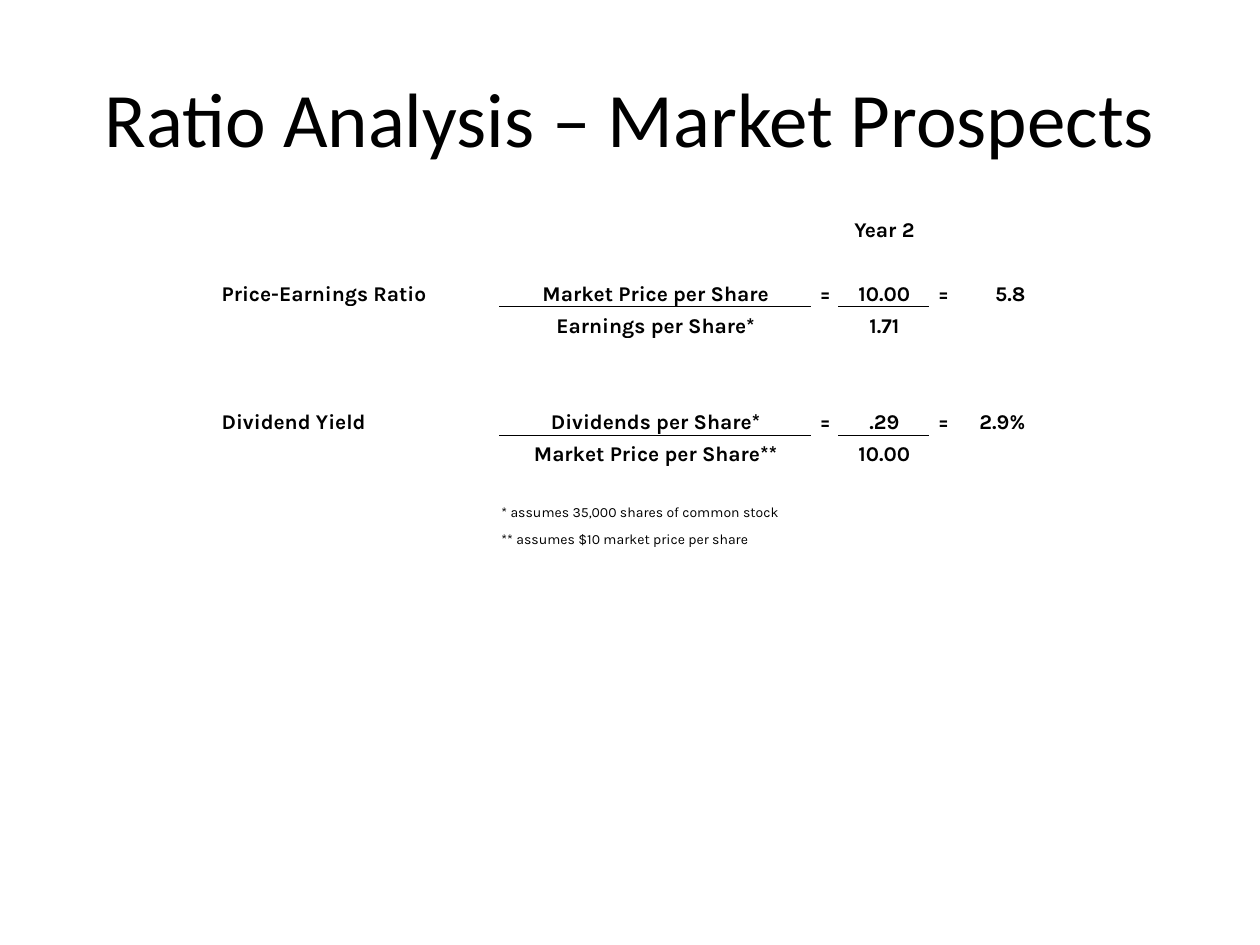
"""Build the market prospects ratio slide."""
from dataclasses import dataclass

from lxml import etree
from pptx import Presentation
from pptx.dml.color import RGBColor
from pptx.enum import text
from pptx.oxml.ns import qn
from pptx.util import Inches, Pt

ALIGN = text.PP_ALIGN


@dataclass(frozen=True)
class Theme:
    """Fonts, sizes and colours."""
    heading_font: str = "Calibri"
    body_font: str = "Karla"
    ink: str = "000000"
    heading: int = 44
    body: int = 12
    note: int = 8
    rule: float = 0.5


@dataclass(frozen=True)
class Ratio:
    """One ratio with its formula, figures and result."""
    row: int
    label: str
    numerator: str
    denominator: str
    top: str
    bottom: str
    result: str


THEME = Theme()
RATIOS = (
    Ratio(2, "Price-Earnings Ratio", "Market Price per Share", "Earnings per Share*",
          "10.00", "1.71", "5.8"),
    Ratio(6, "Dividend Yield", "Dividends per Share*", "Market Price per Share**",
          ".29", "10.00", "2.9%"),
)
NOTES = ("* assumes 35,000 shares of common stock", "** assumes $10 market price per share")
COLUMNS = (2.22, 2.47, 0.22, 0.72, 0.22, 0.72)
ROWS = (2.04 / 8,) * 8 + (0.64 / 3,) * 3
LABEL, FORMULA, EQUALS, FIGURE, SECOND_EQUALS, RESULT = range(6)


def apply(target, formats: dict) -> None:
    """Set each named attribute on the target."""
    for name, value in formats.items():
        setattr(target, name, value)


def style_font(font, family: str, size: int, bold: bool) -> None:
    """Give a font its face, size, weight and colour."""
    apply(font, {"name": family, "size": Pt(size), "bold": bold})
    font.color.rgb = RGBColor.from_string(THEME.ink)


def write(cell, words: str, align=ALIGN.CENTER, size: int = THEME.body, bold: bool = True) -> None:
    """Put formatted words in a cell."""
    paragraph = cell.text_frame.paragraphs[0]
    paragraph.alignment = align
    run = paragraph.add_run()
    run.text = words
    style_font(run.font, THEME.body_font, size, bold)


def rule(cell, side: str) -> None:
    """Draw a thin line on one side of a cell."""
    line = etree.SubElement(cell._tc.get_or_add_tcPr(), qn(f"a:ln{side}"),
                            w=str(Pt(THEME.rule)))
    fill = etree.SubElement(line, qn("a:solidFill"))
    etree.SubElement(fill, qn("a:srgbClr"), val=THEME.ink)


def draw_ratio(table, ratio: Ratio) -> None:
    """Write one ratio as two stacked fractions and a result."""
    write(table.cell(ratio.row, LABEL), ratio.label, ALIGN.LEFT)
    fractions = ((FORMULA, ratio.numerator, ratio.denominator),
                 (FIGURE, ratio.top, ratio.bottom))
    for column, upper, lower in fractions:
        for offset, words, side in ((0, upper, "B"), (1, lower, "T")):
            cell = table.cell(ratio.row + offset, column)
            write(cell, words)
            rule(cell, side)
    for column in (EQUALS, SECOND_EQUALS):
        write(table.cell(ratio.row, column), "=")
    result = table.cell(ratio.row, RESULT)
    write(result, ratio.result, ALIGN.RIGHT)
    result.margin_right = Inches(0.18)


def draw_table(slide) -> None:
    """Lay out the ratio table with its heading and footnotes."""
    table = slide.shapes.add_table(len(ROWS), len(COLUMNS), Inches(1.75), Inches(1.67),
                                   Inches(sum(COLUMNS)), Inches(sum(ROWS))).table
    apply(table, {"first_row": False, "horz_banding": False})
    for column, width in zip(table.columns, COLUMNS):
        column.width = Inches(width)
    for row, height in zip(table.rows, ROWS):
        row.height = Inches(height)
    for cell in table.iter_cells():
        apply(cell, {"margin_left": Inches(0.01), "margin_right": Inches(0.01),
                     "margin_top": Inches(0.01), "margin_bottom": 0,
                     "vertical_anchor": text.MSO_ANCHOR.BOTTOM})
    write(table.cell(0, FIGURE), "Year 2")
    for ratio in RATIOS:
        draw_ratio(table, ratio)
    for row, note in enumerate(NOTES, len(ROWS) - len(NOTES)):
        write(table.cell(row, FORMULA), note, ALIGN.LEFT, THEME.note, False)
    for cell in table.iter_cells():
        cell.fill.background()
        if not cell.text:
            etree.SubElement(cell.text_frame.paragraphs[0]._p, qn("a:endParaRPr"),
                             sz=str(THEME.note * 100))


def draw_title(slide) -> None:
    """Fill and place the title placeholder."""
    title = slide.shapes.title
    apply(title, {"left": Inches(0.5), "top": Inches(0.3),
                  "width": Inches(9), "height": Inches(1.25)})
    title.text_frame.text = "Ratio Analysis – Market Prospects"
    title.text_frame.vertical_anchor = text.MSO_ANCHOR.MIDDLE
    heading = title.text_frame.paragraphs[0]
    heading.alignment = ALIGN.CENTER
    style_font(heading.runs[0].font, THEME.heading_font, THEME.heading, False)


def main() -> None:
    """Create and save the presentation."""
    deck = Presentation()
    apply(deck, {"slide_width": Inches(10), "slide_height": Inches(7.5)})
    slide = deck.slides.add_slide(deck.slide_layouts.get_by_name("Title Only"))
    draw_title(slide)
    draw_table(slide)
    deck.save("out.pptx")


if __name__ == "__main__":
    main()
